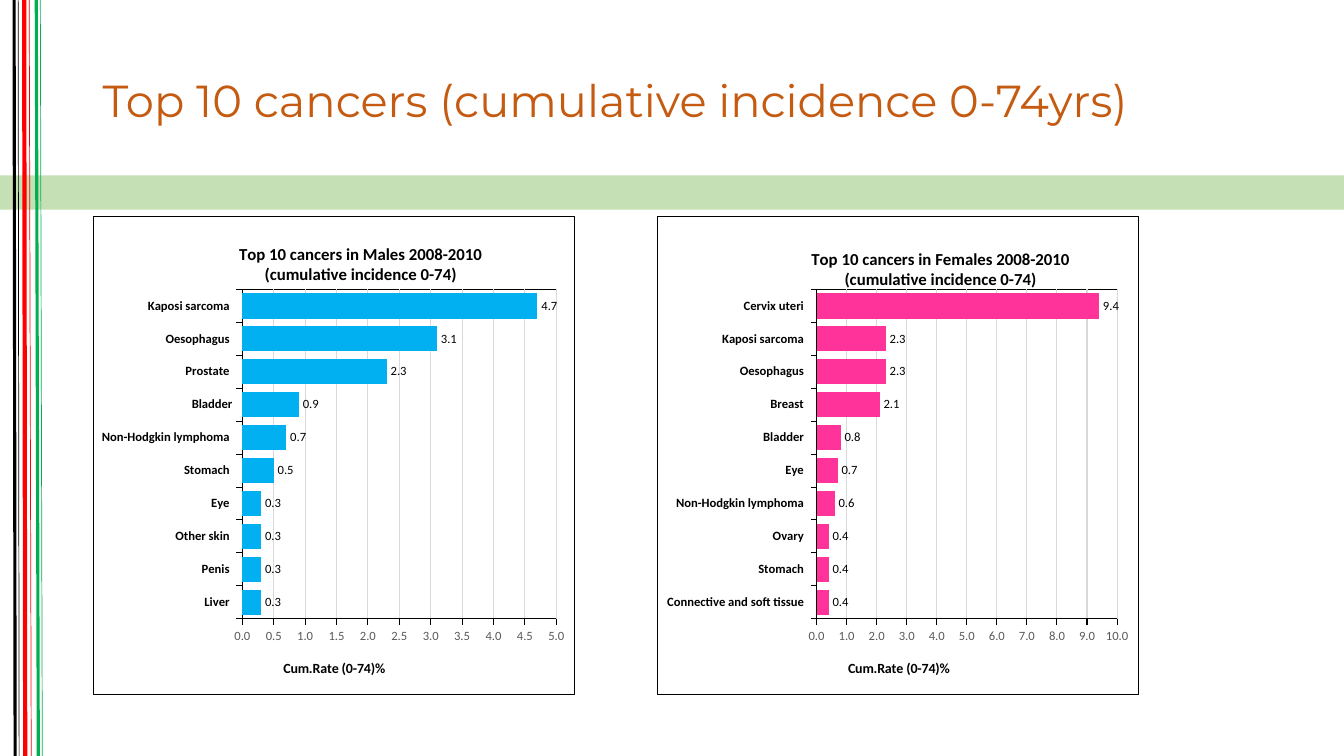
from lxml import etree
from pptx import Presentation
from pptx.chart.data import CategoryChartData
from pptx.dml.color import RGBColor
from pptx.enum.chart import XL_CHART_TYPE, XL_LABEL_POSITION, XL_TICK_MARK
from pptx.enum.shapes import MSO_CONNECTOR, MSO_SHAPE
from pptx.enum.text import MSO_ANCHOR
from pptx.oxml import parse_xml
from pptx.oxml.ns import nsdecls, qn
from pptx.util import Inches, Pt

BAR_CLUSTERED = XL_CHART_TYPE.BAR_CLUSTERED
OUTSIDE_END = XL_LABEL_POSITION.OUTSIDE_END
TICK_OUT, TICK_NONE = XL_TICK_MARK.OUTSIDE, XL_TICK_MARK.NONE
STRAIGHT, RECTANGLE = MSO_CONNECTOR.STRAIGHT, MSO_SHAPE.RECTANGLE
MIDDLE = MSO_ANCHOR.MIDDLE

BLACK = RGBColor(0x00, 0x00, 0x00)
RED = RGBColor(0xFF, 0x00, 0x00)
GREEN = RGBColor(0x00, 0xB0, 0x50)
PALE_GREEN = RGBColor(0xC5, 0xE0, 0xB4)
RUST = RGBColor(0xC5, 0x5A, 0x11)
GREY = RGBColor(0x59, 0x59, 0x59)
PALE_GREY = RGBColor(0xD9, 0xD9, 0xD9)
BLUE = RGBColor(0x00, 0xB0, 0xF0)
PINK = RGBColor(0xFF, 0x33, 0x99)

WIDTH, HEIGHT = 13.33, 7.5
LEFT = 0.92
CHART_STEP, CHART_SIZE = 5.6, (4.78, 4.76)

# Left edge at the top, slant to the bottom, colour, weight
STRIPES = [
    (0.14, 0.01, BLACK, 2.25), (0.29, 0.02, RED, 0.5),
    (0.40, 0.02, GREEN, 0.5), (0.18, 0.01, BLACK, 0.5),
    (0.24, 0.01, RED, 3), (0.36, 0.02, GREEN, 2.25),
]

# Places are shares of the chart's own box
CHARTS = [
    {"group": "Males", "color": BLUE, "maximum": 5, "step": 0.5,
     "format": "0.0", "overlap": 0,
     "title_at": (0.297, 0.05), "axis_title_at": (0.39, 0.92),
     "plot_at": (0.31, 0.153, 0.653, 0.688),
     "rates": [("Liver ", 0.3), ("Penis ", 0.3), ("Other skin ", 0.3),
               ("Eye ", 0.3), ("Stomach ", 0.5),
               ("Non-Hodgkin lymphoma ", 0.7), ("Bladder", 0.9),
               ("Prostate ", 2.3), ("Oesophagus ", 3.1),
               ("Kaposi sarcoma ", 4.7)]},
    {"group": "Females", "color": PINK, "maximum": 10, "step": 1,
     "format": "#,##0.0", "overlap": 100,
     "title_at": (0.313, 0.06), "axis_title_at": (0.39, 0.92),
     "plot_at": (0.33, 0.153, 0.625, 0.688),
     "rates": [("Connective and soft tissue ", 0.4), ("Stomach ", 0.4),
               ("Ovary ", 0.4), ("Non-Hodgkin lymphoma ", 0.6),
               ("Eye ", 0.7), ("Bladder ", 0.8), ("Breast ", 2.1),
               ("Oesophagus ", 2.3), ("Kaposi sarcoma ", 2.3),
               ("Cervix uteri ", 9.4)]},
]


def set_font(font, color, **values):
    font.color.rgb = color
    for name, value in values.items():
        setattr(font, name, value)


def set_line(line, color, weight=0.75):
    line.color.rgb = color
    line.width = Pt(weight)


def outline():
    return parse_xml(
        f'<c:spPr {nsdecls("c", "a")}><a:noFill/><a:ln w="9525"><a:solidFill>'
        f'<a:srgbClr val="{BLACK}"/></a:solidFill></a:ln></c:spPr>')


def place(part, shares):
    """Set a chart part at shares of the chart box."""
    for old in part.findall(qn("c:layout")):
        part.remove(old)
    layout = etree.Element(qn("c:layout"))
    manual = etree.SubElement(layout, qn("c:manualLayout"))
    settings = [("xMode", "edge"), ("yMode", "edge"), *zip("xywh", shares)]
    if len(shares) == 4:
        settings.insert(0, ("layoutTarget", "inner"))
    for name, value in settings:
        etree.SubElement(manual, qn(f"c:{name}")).set("val", str(value))
    text = part.find(qn("c:tx"))
    part.insert(0 if text is None else 1, layout)


def write_title(title, text, size, shares):
    title.text_frame.text = text
    for para in title.text_frame.paragraphs:
        for span in para.runs:
            set_font(span.font, BLACK, size=Pt(size), bold=True, name="Calibri")
    place(title.element, shares)


def add_backdrop(page):
    band = page.shapes.add_shape(RECTANGLE, 0, Inches(1.74),
                                 Inches(WIDTH), Inches(0.34))
    band.shadow.inherit = False
    band.fill.solid()
    band.fill.fore_color.rgb = PALE_GREEN
    band.line.fill.background()
    for left, slant, color, weight in STRIPES:
        stripe = page.shapes.add_connector(
            STRAIGHT, Inches(left), 0, Inches(left + slant), Inches(HEIGHT))
        set_line(stripe.line, color, weight)
        properties = stripe.element.find(qn("p:spPr"))
        etree.SubElement(properties, qn("a:effectLst"))


def add_heading(page, box):
    frame = page.shapes.add_textbox(*map(Inches, box)).text_frame
    frame.word_wrap = True
    frame.vertical_anchor = MIDDLE
    para = frame.paragraphs[0]
    para.line_spacing = 0.9
    span = para.add_run()
    span.text = "Top 10 cancers (cumulative incidence 0-74yrs)"
    set_font(span.font, RUST, size=Pt(32), name="Montserrat")


def add_rate_chart(page, box, details):
    names, rates = zip(*details["rates"])
    data = CategoryChartData(number_format="0.0")
    data.categories = names
    data.add_series("Series 1", rates)
    chart = page.shapes.add_chart(
        BAR_CLUSTERED, *map(Inches, box), data).chart
    chart.has_legend = False
    set_font(chart.font, BLACK, size=Pt(10), name="Calibri")

    # Bars and their labels
    plot = chart.plots[0]
    plot.vary_by_categories = False
    plot.gap_width, plot.overlap = 30, details["overlap"]
    fill = plot.series[0].format.fill
    fill.solid()
    fill.fore_color.rgb = details["color"]
    plot.has_data_labels = True
    labels = plot.data_labels
    label_format = {"show_value": True, "position": OUTSIDE_END,
                    "number_format": "0.0", "number_format_is_linked": False}
    for name, value in label_format.items():
        setattr(labels, name, value)
    set_font(labels.font, BLACK, size=Pt(9), name="Calibri")

    # Axes
    rate_axis = chart.value_axis
    axis_styles = [(chart.category_axis, BLACK, True), (rate_axis, GREY, False)]
    for axis, color, bold in axis_styles:
        axis.major_tick_mark, axis.minor_tick_mark = TICK_OUT, TICK_NONE
        set_line(axis.format.line, BLACK)
        set_font(axis.tick_labels.font, color, size=Pt(9), bold=bold,
                 name="Calibri")
    rate_axis.minimum_scale = 0
    rate_axis.maximum_scale = details["maximum"]
    rate_axis.major_unit = details["step"]
    rate_axis.tick_labels.number_format = details["format"]
    rate_axis.tick_labels.number_format_is_linked = False
    set_line(rate_axis.major_gridlines.format.line, PALE_GREY)

    # Titles, places and frames
    write_title(chart.chart_title, f"Top 10 cancers in {details['group']} "
                "2008-2010\n(cumulative incidence 0-74)", 12,
                details["title_at"])
    write_title(rate_axis.axis_title, "Cum.Rate (0-74)%", 10,
                details["axis_title_at"])
    body = chart.element.find(qn("c:chart"))
    plot_area = body.find(qn("c:plotArea"))
    place(plot_area, details["plot_at"])
    plot_area.append(outline())
    body.addnext(outline())


def main():
    deck = Presentation()
    deck.slide_width, deck.slide_height = Inches(WIDTH), Inches(HEIGHT)
    page = deck.slides.add_slide(deck.slide_layouts[6])
    add_backdrop(page)
    add_heading(page, (LEFT, 0.4, 11.92, 1.25))
    for column, details in enumerate(CHARTS):
        add_rate_chart(page, (LEFT + column * CHART_STEP, 2.14, *CHART_SIZE),
                       details)
    deck.save("out.pptx")


if __name__ == "__main__":
    main()
